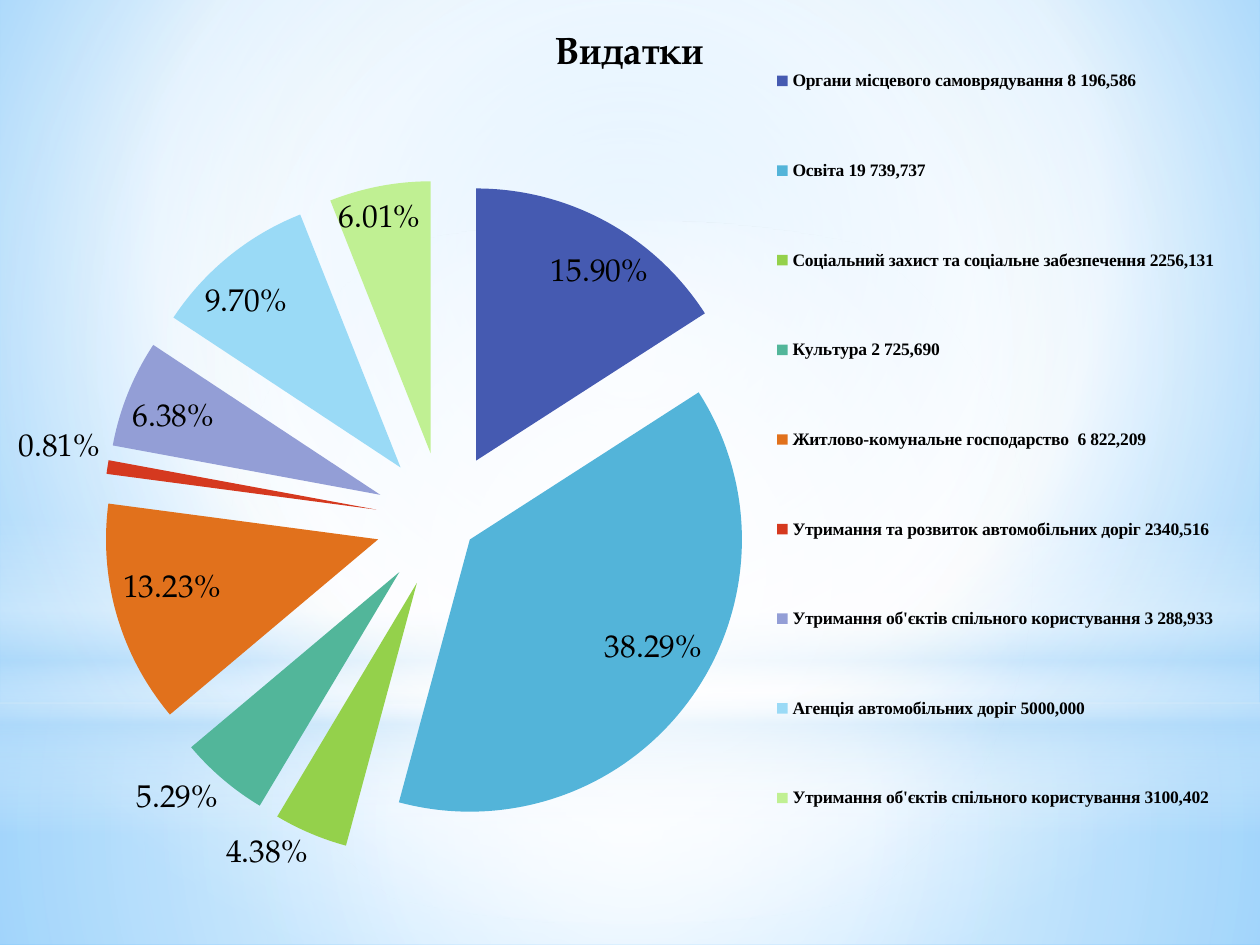
"""Build a budget spending slide with an exploded pie chart."""
from lxml import etree
from pptx import Presentation
from pptx import util as u
from pptx.chart import data
from pptx.dml.color import RGBColor
from pptx.enum import chart as ch, shapes
from pptx.oxml import parse_xml
from pptx.oxml.ns import nsdecls, qn

COLOURS = {"white": "FFFFFF", "pale": "B4DCFA", "sky": "9ED5FF", "edge": "5BB9FF", "text": "000000"}
SPENDING = [
    ("Органи місцевого самоврядування 8 196,586", 15.9, "455AB1"),
    ("Освіта 19 739,737", 38.29, "53B4D9"),
    ("Соціальний захист та соціальне забезпечення 2256,131", 4.38, "94D14B"),
    ("Культура 2 725,690", 5.29, "52B69A"),
    ("Житлово-комунальне господарство  6 822,209", 13.23, "E1711C"),
    ("Утримання та розвиток автомобільних доріг 2340,516", 0.81, "D5391F"),
    ("Утримання об'єктів спільного користування 3 288,933", 6.38, "939ED6"),
    ("Агенція автомобільних доріг 5000,000", 9.7, "9ADAF6"),
    ("Утримання об'єктів спільного користування 3100,402", 6.01, "C0F093"),
]
CENTRE = (50, 50, 50, 50)
WIDTH, HEIGHT = 10, 7.5


def set_gradient(fill, stops, focus):
    fill.gradient()
    old = fill._xPr.find(qn("a:gradFill"))
    stop_xml = "".join(
        f'<a:gs pos="{pos * 1000}"><a:srgbClr val="{COLOURS[name]}">'
        f'<a:alpha val="{alpha * 1000}"/></a:srgbClr></a:gs>'
        for pos, name, alpha in stops)
    if focus:
        sides = " ".join(f'{side}="{value * 1000}"' for side, value in zip("ltrb", focus))
        direction = f'<a:path path="circle"><a:fillToRect {sides}/></a:path>'
    else:
        direction = '<a:lin ang="5400000" scaled="0"/>'
    new = parse_xml(f'<a:gradFill {nsdecls("a")} rotWithShape="1"><a:gsLst>{stop_xml}</a:gsLst>{direction}</a:gradFill>')
    old.getparent().replace(old, new)


def set_layout(part, before, left, top, width, height, inner=False):
    for old in part.findall(qn("c:layout")):
        part.remove(old)
    target = '<c:layoutTarget val="inner"/>' if inner else ""
    fractions = (left / WIDTH, top / HEIGHT, width / WIDTH, height / HEIGHT)
    box = "".join(f'<c:{tag} val="{value:.4f}"/>' for tag, value in zip("xywh", fractions))
    layout = parse_xml(
        f'<c:layout {nsdecls("c")}><c:manualLayout>{target}<c:xMode val="edge"/>'
        f'<c:yMode val="edge"/>{box}</c:manualLayout></c:layout>')
    part.find(qn(before)).addprevious(layout)


prs = Presentation()
prs.slide_width, prs.slide_height = u.Inches(WIDTH), u.Inches(HEIGHT)
slide = prs.slides.add_slide(prs.slide_layouts[6])
set_gradient(slide.background.fill, [(0, "sky", 100), (60, "white", 100), (100, "edge", 100)], (20, 10, 20, 60))

glows = [
    ("RECTANGLE", 5.58, 1.92, [(0, "white", 91), (37, "white", 76), (100, "pale", 79)], CENTRE),
    ("RECTANGLE", 0, 5.58, [(0, "white", 89), (48, "white", 62), (100, "pale", 79)], CENTRE),
    ("RECTANGLE", 4.12, 2.5, [(0, "white", 0), (29, "white", 30), (45, "pale", 40),
                              (55, "white", 26), (65, "pale", 60), (100, "white", 0)], None),
    ("OVAL", 1.75, 5.58, [(0, "white", 100), (56, "white", 0)], CENTRE),
]
for outline, top, height, stops, focus in glows:
    glow = slide.shapes.add_shape(
        shapes.MSO_SHAPE[outline], u.Inches(0), u.Inches(top), u.Inches(WIDTH), u.Inches(height))
    glow.shadow.inherit = False
    glow.line.fill.background()
    set_gradient(glow.fill, stops, focus)

spending = data.CategoryChartData()
spending.categories = [name for name, share, colour in SPENDING]
spending.add_series("Видатки", [share for name, share, colour in SPENDING])
pie = slide.shapes.add_chart(
    ch.XL_CHART_TYPE.PIE, u.Inches(0), u.Inches(0), u.Inches(WIDTH), u.Inches(HEIGHT), spending).chart
pie.font.size = u.Pt(18)
pie.font.name = "TeX Gyre Pagella"
pie.font.color.rgb = RGBColor.from_string(COLOURS["text"])

pie.has_title = True
heading = pie.chart_title.text_frame.paragraphs[0].add_run()
heading.text = "Видатки"
heading.font.size = u.Pt(21.6)
heading.font.bold = True
heading.font.name = "TeX Gyre Pagella"
heading.font.color.rgb = RGBColor.from_string(COLOURS["text"])

pie.has_legend = True
pie.legend.position = ch.XL_LEGEND_POSITION.RIGHT
pie.legend.include_in_layout = False
pie.legend.font.size = u.Pt(10)
pie.legend.font.bold = True
pie.legend.font.name = "Times New Roman"
set_layout(pie.legend._element, "c:overlay", 6, 0.01, 3.8, 6.96)

plot = pie.plots[0]
plot.vary_by_categories = True
set_layout(plot._element.getparent(), "c:pieChart", 1.36, 1.97, 4.32, 4.32, inner=True)
shares = plot.series[0]
for index, (name, share, colour) in enumerate(SPENDING):
    slice_fill = shares.points[index].format.fill
    slice_fill.solid()
    slice_fill.fore_color.rgb = RGBColor.from_string(colour)
for index, point in enumerate(shares._element.findall(qn("c:dPt"))):
    explosion = etree.Element(qn("c:explosion"), val="12" if index == 1 else "25")
    point.find(qn("c:spPr")).addprevious(explosion)

plot.has_data_labels = True
labels = plot.data_labels
labels.show_percentage = True
labels.show_value = False
labels.number_format = "0.00%"
labels.number_format_is_linked = False
labels.position = ch.XL_LABEL_POSITION.BEST_FIT

prs.save("out.pptx")
